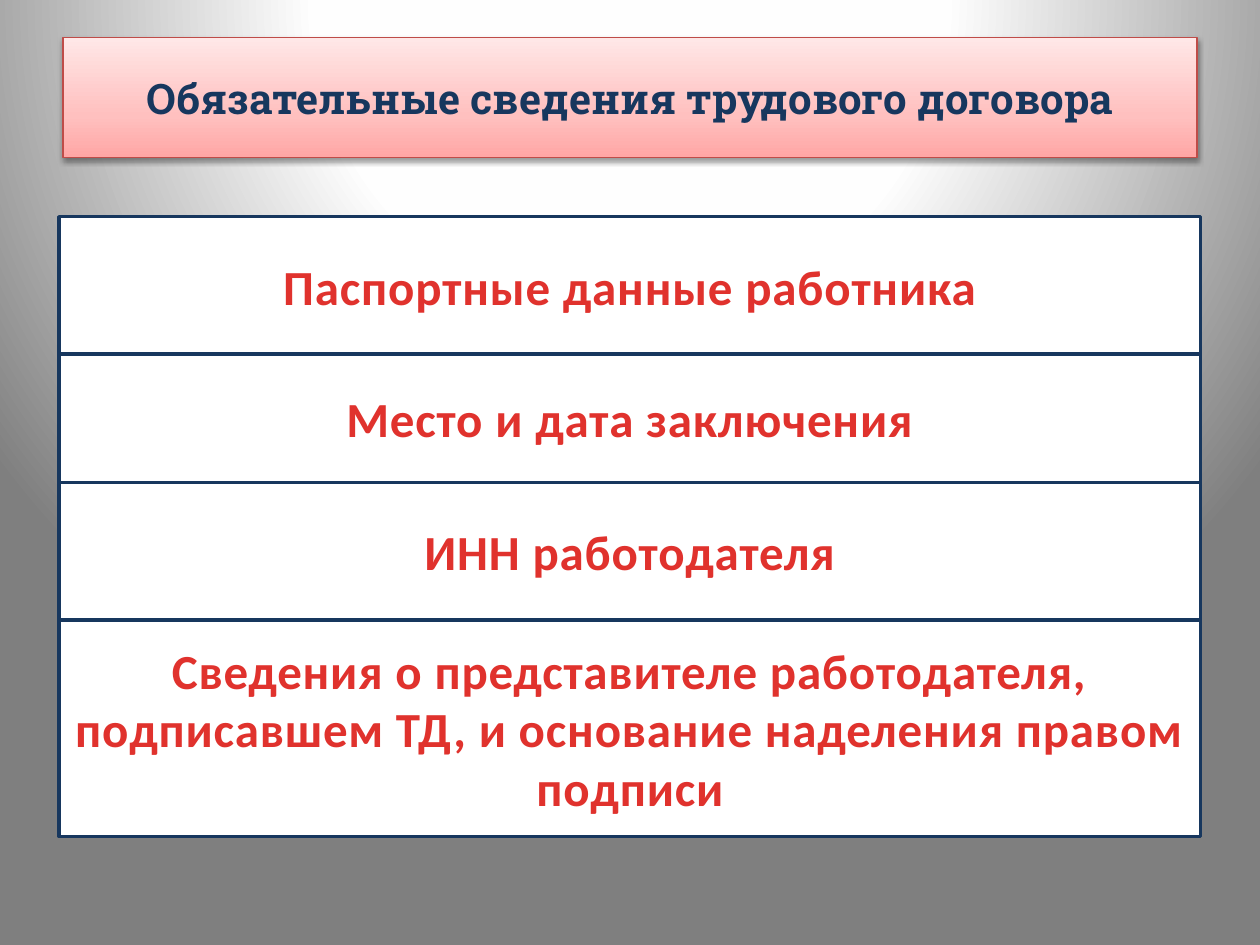
from dataclasses import dataclass

import pptx
import pptx.dml.color
import pptx.enum.shapes
import pptx.enum.text
import pptx.oxml
import pptx.oxml.ns
import pptx.util
from lxml import etree

Inches = pptx.util.Inches
Pt = pptx.util.Pt
Stops = tuple[tuple[int, str], ...]


@dataclass(frozen=True)
class Theme:
    navy: str = "17375E"
    white: str = "FFFFFF"
    title_line: str = "BF4C48"
    title_stops: Stops = ((0, "FFA6A5"), (35, "FFC0BF"), (100, "FFE7E7"))
    text_stops: Stops = ((25, "E0322D"), (100, "A2201C"))
    page_stops: Stops = ((0, "FFFFFF"), (40, "FEFEFE"), (100, "7F7F7F"))
    title_font: str = "Roboto Slab"
    row_font: str = "Calibri"
    title_size: int = 24
    row_size: int = 28


@dataclass(frozen=True)
class Row:
    text: str
    height: float


THEME = Theme()
ROW_LEFT, ROW_TOP, ROW_WIDTH = 0.47, 1.72, 9.06
ROWS = (
    Row("Паспортные данные работника", 1.09),
    Row("Место и дата заключения", 1.02),
    Row("ИНН работодателя", 1.09),
    Row("Сведения о представителе работодателя, подписавшем ТД, "
        "и основание наделения правом подписи", 1.72),
)
PAGE_GLOW = ('<a:path path="circle"><a:fillToRect l="50000" t="-80000" '
             'r="50000" b="180000"/></a:path>')


def rgb(code: str) -> pptx.dml.color.RGBColor:
    return pptx.dml.color.RGBColor.from_string(code)


def drawing_xml(markup: str) -> etree._Element:
    """Parse one DrawingML element, declaring its namespace."""
    tag, rest = markup.split(" ", 1)
    return pptx.oxml.parse_xml(f'{tag} {pptx.oxml.ns.nsdecls("a")} {rest}')


def linear(degrees: int) -> str:
    return f'<a:lin ang="{degrees * 60000}" scaled="0"/>'


def set_gradient(fill, owner: etree._Element, stops: Stops, shade: str) -> None:
    """Give a fill its gradient; owner is the element that holds the fill."""
    fill.gradient()
    default = owner.find(".//" + pptx.oxml.ns.qn("a:gradFill"))
    marks = "".join(f'<a:gs pos="{pos * 1000}"><a:srgbClr val="{code}"/></a:gs>'
                    for pos, code in stops)
    gradient = drawing_xml(
        f'<a:gradFill rotWithShape="1"><a:gsLst>{marks}</a:gsLst>{shade}</a:gradFill>')
    default.getparent().replace(default, gradient)


def set_outline(box, color: str, width: float) -> None:
    box.line.color.rgb = rgb(color)
    box.line.width = Pt(width)


def add_centered_text(box, text: str, font: str, size: int):
    frame = box.text_frame
    frame.word_wrap = True
    frame.auto_size = pptx.enum.text.MSO_AUTO_SIZE.NONE
    frame.vertical_anchor = pptx.enum.text.MSO_ANCHOR.MIDDLE
    para = frame.paragraphs[0]
    para.alignment = pptx.enum.text.PP_ALIGN.CENTER
    span = para.add_run()
    span.text = text
    span.font.name = font
    span.font.size = Pt(size)
    span.font.bold = True
    return span


def format_title(box, text: str) -> None:
    box.left, box.top = Inches(0.5), Inches(0.3)
    box.width, box.height = Inches(9), Inches(0.95)
    set_gradient(box.fill, box.element, THEME.title_stops, linear(270))
    set_outline(box, THEME.title_line, 0.75)
    box.shadow.inherit = False
    effects = box.element.find(".//" + pptx.oxml.ns.qn("a:effectLst"))
    effects.append(drawing_xml(
        f'<a:outerShdw blurRad="{Pt(3.1)}" dist="{Pt(1.6)}" dir="5400000" '
        'rotWithShape="0"><a:srgbClr val="000000"><a:alpha val="38000"/>'
        '</a:srgbClr></a:outerShdw>'))
    span = add_centered_text(box, text, THEME.title_font, THEME.title_size)
    span.font.color.rgb = rgb(THEME.navy)


def add_row(page, row: Row, top: float) -> None:
    box = page.shapes.add_shape(
        pptx.enum.shapes.MSO_SHAPE.RECTANGLE, Inches(ROW_LEFT), Inches(top),
        Inches(ROW_WIDTH), Inches(row.height))
    box.shadow.inherit = False
    box.fill.solid()
    box.fill.fore_color.rgb = rgb(THEME.white)
    set_outline(box, THEME.navy, 2)
    span = add_centered_text(box, row.text, THEME.row_font, THEME.row_size)
    set_gradient(span.font.fill, span._r, THEME.text_stops, linear(90))
    span._r.get_or_add_rPr().set("spc", "50")


def main() -> None:
    deck = pptx.Presentation()
    deck.slide_width, deck.slide_height = Inches(10), Inches(7.5)
    page = deck.slides.add_slide(deck.slide_layouts.get_by_name("Title Only"))
    set_gradient(page.background.fill, page.element, THEME.page_stops, PAGE_GLOW)
    format_title(page.shapes.title, "Обязательные сведения трудового договора")
    top = ROW_TOP
    for row in ROWS:
        add_row(page, row, top)
        top += row.height
    deck.save("out.pptx")


if __name__ == "__main__":
    main()
